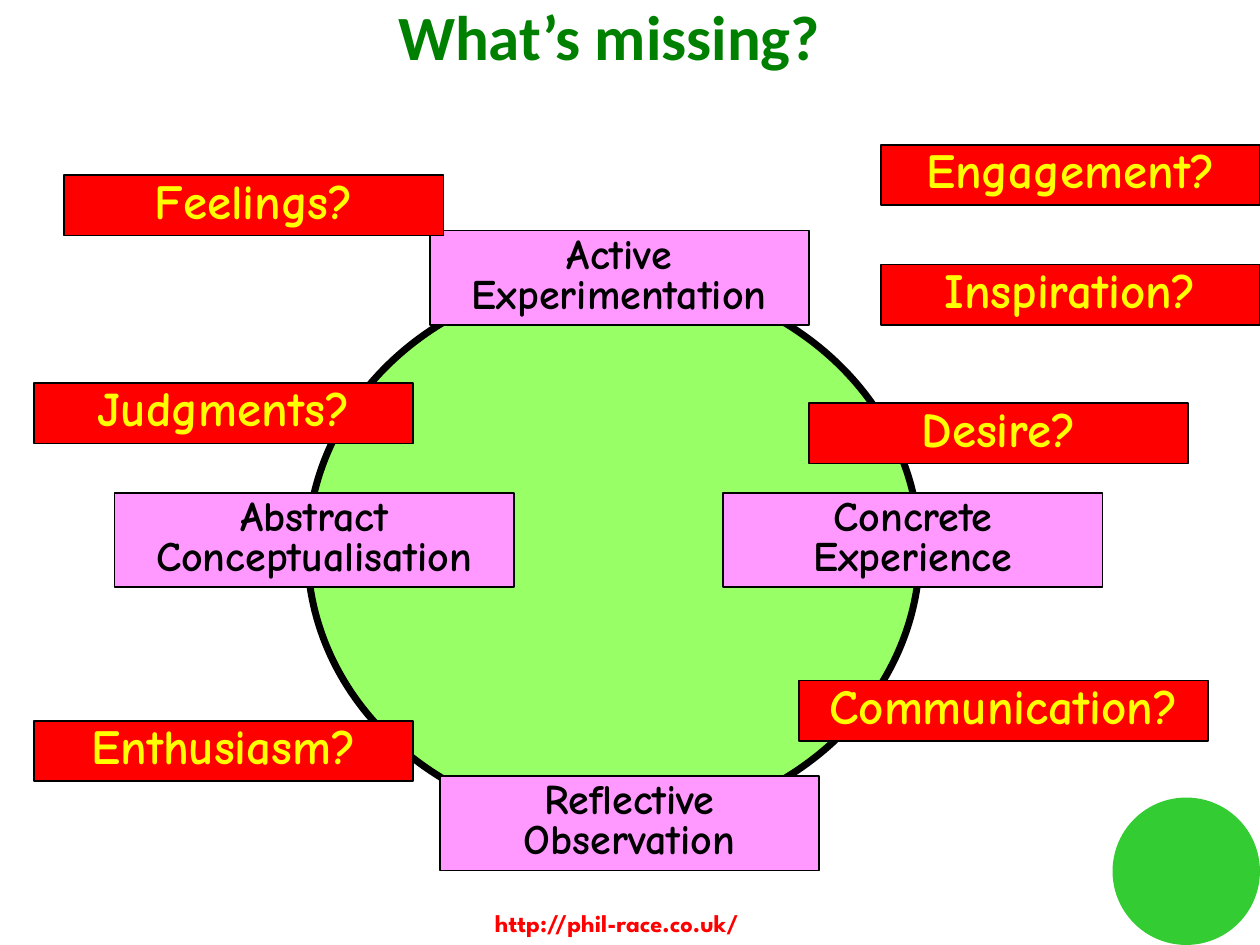
import dataclasses

import pptx
import pptx.dml.color
import pptx.enum.shapes
import pptx.enum.text
import pptx.util

Inches = pptx.util.Inches
Shape = pptx.enum.shapes.MSO_SHAPE
Anchor = pptx.enum.text.MSO_ANCHOR
Align = pptx.enum.text.PP_ALIGN

COLORS = {
    "black": "000000",
    "title": "008000",
    "wheel": "99FF66",
    "stage": "FF99FF",
    "red": "FF0000",
    "yellow": "FFFF00",
    "badge": "33CC33",
}


@dataclasses.dataclass(frozen=True)
class Style:
    fill: str
    ink: str
    size: int
    height: float


@dataclasses.dataclass(frozen=True)
class Label:
    text: str
    left: float
    top: float
    style: Style
    width: float = 3.01


STAGE = Style("stage", "black", 24, 0.75)
PROMPT = Style("red", "yellow", 28, 0.48)

LABELS = [
    Label("Active\nExperimentation", 3.41, 1.83, STAGE),
    Label("Concrete\nExperience", 5.74, 3.91, STAGE),
    Label("Reflective\nObservation", 3.49, 6.16, STAGE),
    Label("Abstract\nConceptualisation", 0.91, 3.91, STAGE, 3.17),
    Label("Feelings?", 0.51, 1.39, PROMPT),
    Label("Inspiration?", 6.99, 2.1, PROMPT),
    Label("Enthusiasm?", 0.27, 5.72, PROMPT),
    Label("Communication?", 6.34, 5.4, PROMPT, 3.25),
    Label("Judgments?", 0.27, 3.04, PROMPT),
    Label("Desire?", 6.42, 3.2, PROMPT),
    Label("Engagement?", 6.99, 1.15, PROMPT),
]


def tint(name: str) -> pptx.dml.color.RGBColor:
    return pptx.dml.color.RGBColor.from_string(COLORS[name])


def write(frame, text: str, face: str, size: int, ink: str,
          align=Align.LEFT, space: float = 1.0) -> None:
    frame.text = text
    frame.word_wrap = True
    for line in frame.paragraphs:
        line.alignment = align
        line.line_spacing = space
        for run in line.runs:
            run.font.name = face
            run.font.size = pptx.util.Pt(size)
            run.font.bold = True
            run.font.color.rgb = tint(ink)


def draw(slide, kind, left: float, top: float, width: float, height: float,
         fill: str, weight: float = 0):
    shape = slide.shapes.add_shape(
        kind, Inches(left), Inches(top), Inches(width), Inches(height))
    shape.shadow.inherit = False
    shape.fill.solid()
    shape.fill.fore_color.rgb = tint(fill)
    if weight:
        shape.line.color.rgb = tint("black")
        shape.line.width = pptx.util.Pt(weight)
    else:
        shape.line.fill.background()
    return shape


def place(slide, label: Label) -> None:
    style = label.style
    box = draw(slide, Shape.RECTANGLE, label.left, label.top,
               label.width, style.height, style.fill, 1)
    frame = box.text_frame
    frame.vertical_anchor = Anchor.TOP
    write(frame, label.text, "Comic Neue", style.size, style.ink,
          Align.CENTER, 0.8)
    frame.auto_size = pptx.enum.text.MSO_AUTO_SIZE.SHAPE_TO_FIT_TEXT


def main() -> None:
    deck = pptx.Presentation()
    deck.slide_width, deck.slide_height = Inches(10), Inches(7.5)
    slide = deck.slides.add_slide(deck.slide_layouts[5])

    title = slide.shapes.title
    title.left, title.top = Inches(0.59), Inches(-0.27)
    title.width, title.height = Inches(8.49), Inches(1.19)
    title.text_frame.vertical_anchor = Anchor.MIDDLE
    write(title.text_frame, "What’s missing?", "Calibri", 36, "title",
          Align.CENTER, 0.85)

    draw(slide, Shape.OVAL, 8.83, 6.33, 1.17, 1.17, "badge")
    link = slide.shapes.add_textbox(
        Inches(3.83), Inches(7.16), Inches(2.89), Inches(0.34))
    write(link.text_frame, "http://phil-race.co.uk/", "League Spartan", 14, "red")

    draw(slide, Shape.OVAL, 2.44, 2.19, 4.86, 4.36, "wheel", 4)
    for label in LABELS:
        place(slide, label)

    deck.save("out.pptx")


if __name__ == "__main__":
    main()
